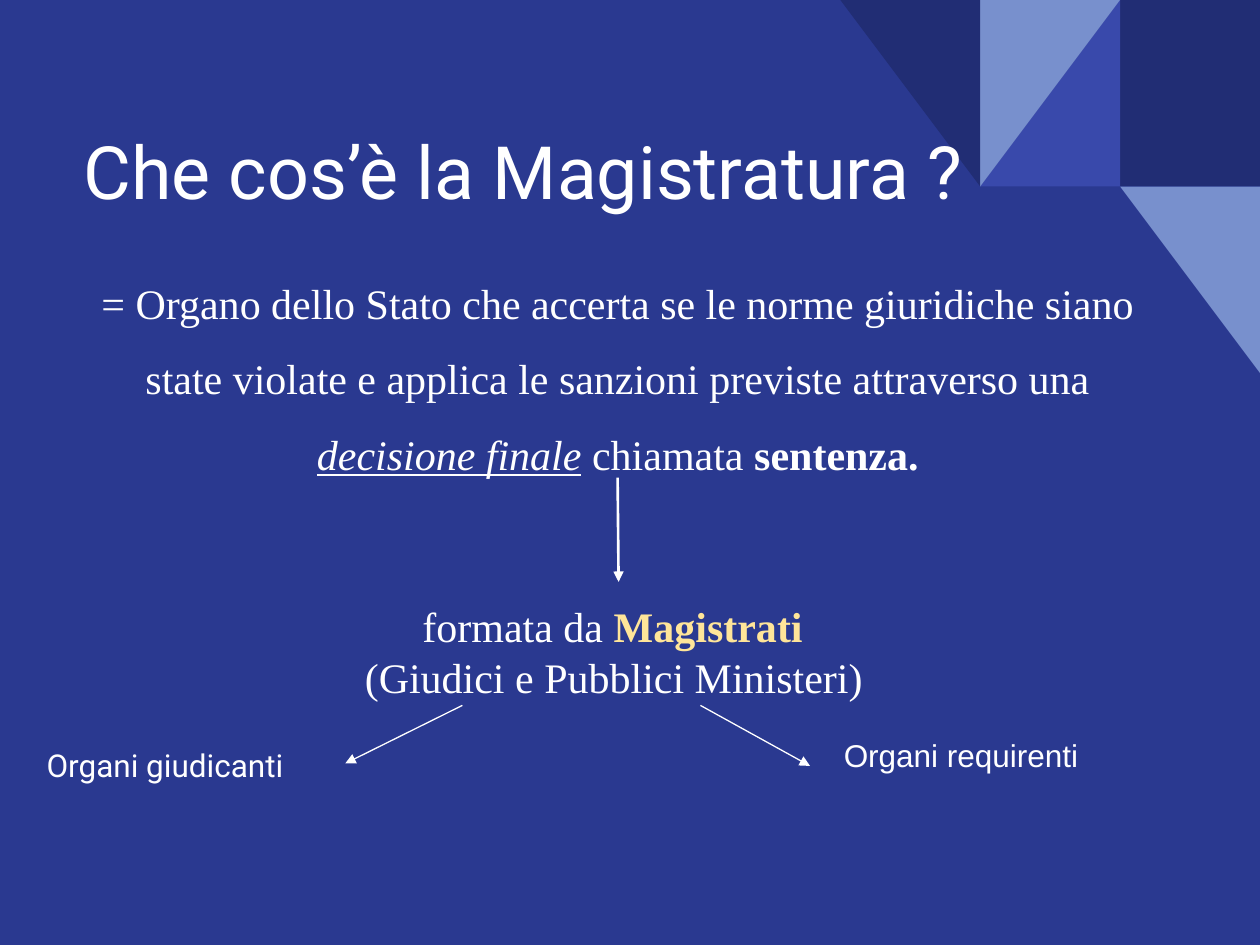
import pptx
import pptx.util
import pptx.dml.color
import pptx.enum.shapes
import pptx.enum.text
import pptx.oxml
import pptx.oxml.ns
from pptx.util import Cm, Pt

COLORS = {
    "background": "2A3990",
    "navy": "212D74",
    "indigo": "3949AB",
    "light": "7890CD",
    "white": "FFFFFF",
    "yellow": "FFE599",
}
SHAPE = pptx.enum.shapes.MSO_SHAPE
ALIGN = pptx.enum.text.PP_ALIGN
ANCHOR = pptx.enum.text.MSO_ANCHOR


def rgb(name):
    return pptx.dml.color.RGBColor.from_string(COLORS[name])


def write_paragraph(para, spans, font_name, size, align=ALIGN.LEFT):
    """Fill a paragraph from (text, overrides) pairs that share one base font."""
    para.alignment = align
    para.font.name = font_name
    para.font.size = Pt(size)
    para.font.color.rgb = rgb("white")
    for text, overrides in spans:
        span = para.add_run()
        span.text = text
        for name, value in overrides.items():
            if name == "color":
                span.font.color.rgb = rgb(value)
            else:
                setattr(span.font, name, value)


deck = pptx.Presentation()
deck.slide_width, deck.slide_height = Cm(25.4), Cm(19.05)
page = deck.slides.add_slide(deck.slide_layouts[5])
page.background.fill.solid()
page.background.fill.fore_color.rgb = rgb("background")

# Corner mosaic: column, row, shape, rotation, mirrored, colour
tile_width, tile_height = 2.82, 3.76
mosaic_left = 25.4 - 3 * tile_width
tiles = [
    (2, 0, SHAPE.RECTANGLE, 0, False, "navy"),
    (1, 0, SHAPE.RIGHT_TRIANGLE, 0, True, "indigo"),
    (1, 0, SHAPE.RIGHT_TRIANGLE, 180, True, "light"),
    (0, 0, SHAPE.RIGHT_TRIANGLE, 180, False, "navy"),
    (2, 1, SHAPE.RIGHT_TRIANGLE, 180, False, "light"),
]
for column, row, kind, rotation, mirrored, color in tiles:
    tile = page.shapes.add_shape(
        kind, Cm(mosaic_left + column * tile_width), Cm(row * tile_height),
        Cm(tile_width), Cm(tile_height))
    tile.rotation = rotation
    if mirrored:
        tile._element.spPr.xfrm.set("flipH", "1")
    tile.shadow.inherit = False
    tile.fill.solid()
    tile.fill.fore_color.rgb = rgb(color)
    tile.line.fill.background()

# Title, brought in front of the mosaic
title = page.shapes.title
title.left, title.top, title.width, title.height = Cm(0.69), Cm(0.58), Cm(22.38), Cm(3.99)
page.shapes._spTree.append(title._element)
frame = title.text_frame
frame.auto_size = pptx.enum.text.MSO_AUTO_SIZE.NONE
frame.vertical_anchor = ANCHOR.BOTTOM
frame.margin_left = Cm(0.99)
frame.margin_right = frame.margin_top = frame.margin_bottom = Cm(0.25)
write_paragraph(frame.paragraphs[0], [("Che cos’è la Magistratura ?", {})], "Roboto", 42)

# Text boxes: position, font, size, alignment, line spacing, paragraphs
definition = [
    ("= Organo dello Stato che accerta se le norme giuridiche siano state violate "
     "e applica le sanzioni previste attraverso una ", {}),
    ("decisione finale", {"italic": True, "underline": True}),
    (" chiamata ", {}),
    ("sentenza.", {"bold": True}),
]
members = [("formata da ", {}), ("Magistrati ", {"bold": True, "color": "yellow"})]
roles = [("(Giudici e Pubblici Ministeri)", {}), (" ", {"size": Pt(18)})]
boxes = [
    ((1.04, 4.83, 22.83, 5.54), "Times New Roman", 24, ALIGN.CENTER, 1.5, [definition]),
    ((5.33, 11.86, 14.25, 3.76), "Times New Roman", 24, ALIGN.CENTER, 1, [members, roles]),
    ((0.69, 14.78, 7.44, 1.96), "Roboto", 18, ALIGN.LEFT, 1, [[("Organi giudicanti", {})]]),
    ((16.76, 14.58, 8.15, 1.3), "Arial", 18, ALIGN.LEFT, 1, [[("Organi requirenti", {})]]),
]
for place, font_name, size, align, spacing, paragraphs in boxes:
    box = page.shapes.add_textbox(*map(Cm, place))
    frame = box.text_frame
    frame.word_wrap = True
    frame.margin_left = frame.margin_right = Cm(0.25)
    frame.margin_top = frame.margin_bottom = Cm(0.25)
    for index, spans in enumerate(paragraphs):
        para = frame.add_paragraph() if index else frame.paragraphs[0]
        para.line_spacing = spacing
        write_paragraph(para, spans, font_name, size, align)

# Arrows: start, end, line width
arrows = [
    ((12.45, 9.63), (12.47, 11.73), 1.5),
    ((9.32, 14.22), (6.96, 15.39), 0.75),
    ((14.12, 14.22), (16.33, 15.44), 0.75),
]
for start, end, width in arrows:
    arrow = page.shapes.add_connector(
        pptx.enum.shapes.MSO_CONNECTOR.STRAIGHT, *map(Cm, start + end))
    arrow.line.color.rgb = rgb("white")
    arrow.line.width = Pt(width)
    head = pptx.oxml.parse_xml(
        f'<a:tailEnd {pptx.oxml.ns.nsdecls("a")} type="triangle" w="med" len="med"/>')
    arrow.line._get_or_add_ln().append(head)
    arrow._element.spPr.append(
        pptx.oxml.parse_xml(f'<a:effectLst {pptx.oxml.ns.nsdecls("a")}/>'))

deck.save("out.pptx")
